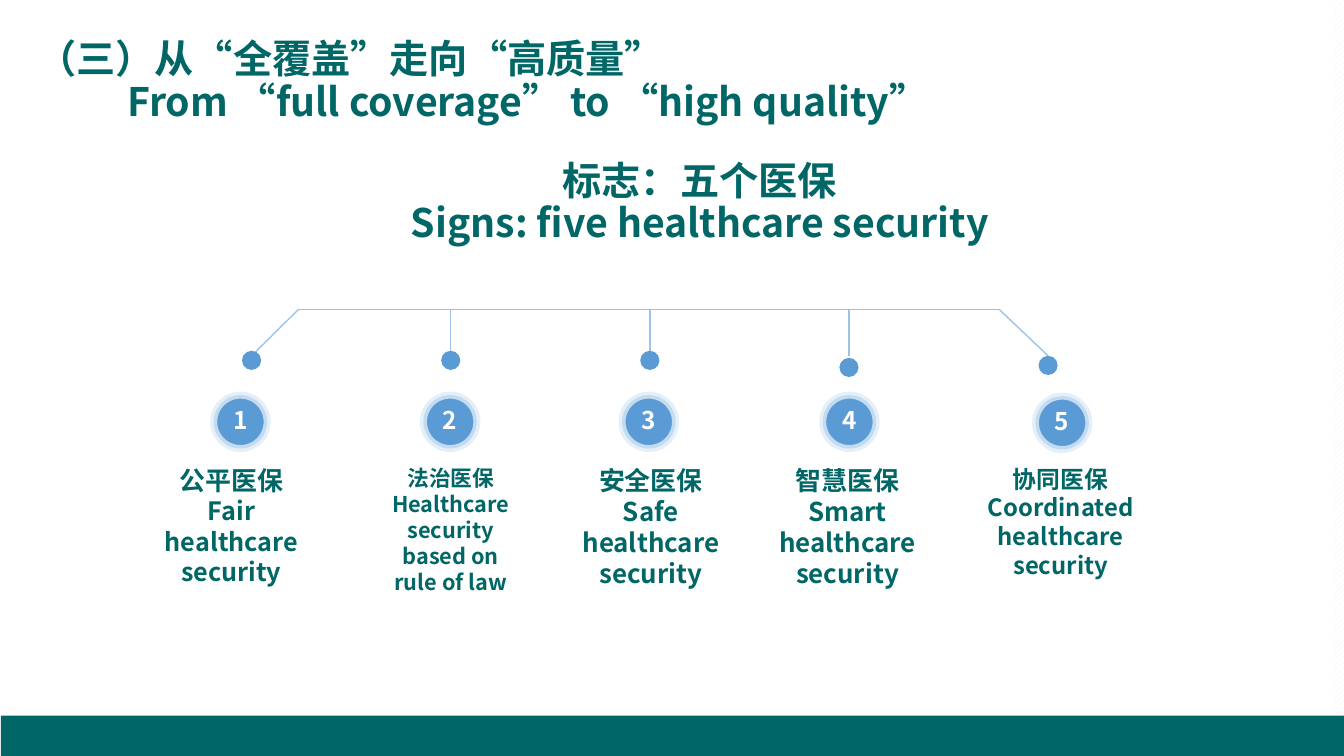
from lxml import etree
from pptx import Presentation
from pptx.dml.color import RGBColor
from pptx.enum.dml import MSO_PATTERN
from pptx.enum.shapes import MSO_CONNECTOR, MSO_SHAPE
from pptx.enum.text import MSO_ANCHOR, MSO_AUTO_SIZE, PP_ALIGN
from pptx.oxml.ns import qn
from pptx.util import Inches, Pt

RECT, OVAL = MSO_SHAPE.RECTANGLE, MSO_SHAPE.OVAL
STRAIGHT = MSO_CONNECTOR.STRAIGHT
LEFT, CENTER = PP_ALIGN.LEFT, PP_ALIGN.CENTER
TOP, MIDDLE = MSO_ANCHOR.TOP, MSO_ANCHOR.MIDDLE
NO_FIT = MSO_AUTO_SIZE.NONE
DIAGONAL = MSO_PATTERN.WIDE_UPWARD_DIAGONAL

W, H = 13.33, 7.5
FONT = "Noto Sans CJK SC"
COLORS = {"white": "FFFFFF", "hatch": "F2F2F2", "teal": "006666",
          "blue": "5B9BD5", "line": "9DC3E6", "ring": "DEEBF7"}

RAIL = (2.96, 9.91, 3.07)
DOT, BADGE = 0.19, 0.53
FIRST_DOT, PITCH = 2.4, 1.975
LABEL_TOP = 4.56
SIGNS = [
    {"zh": "公平医保", "en": "Fair healthcare security", "sizes": (18.5, 18),
     "dot_top": 3.48, "badge": (2.12, 3.92), "label": (1.49, 1.61, 1.27)},
    {"zh": "法治医保", "en": "Healthcare security based on rule of law", "sizes": (15.5, 15.5),
     "dot_top": 3.48, "badge": (4.2, 3.92), "label": (3.76, 1.42, 1.39)},
    {"zh": "安全医保", "en": "Safe healthcare security", "sizes": (18.5, 18.5),
     "dot_top": 3.48, "badge": (6.17, 3.92), "label": (5.65, 1.61, 1.27)},
    {"zh": "智慧医保", "en": "Smart healthcare security", "sizes": (18.5, 18.5),
     "dot_top": 3.55, "badge": (8.16, 3.92), "label": (7.6, 1.61, 1.27)},
    {"zh": "协同医保", "en": "Coordinated healthcare security", "sizes": (17, 17),
     "dot_top": 3.53, "badge": (10.27, 3.93), "label": (9.63, 1.78, 1.27)},
]


def rgb(name):
    """Return the named colour."""
    return RGBColor.from_string(COLORS[name])


def write(tf, lines, sizes, color="teal", align=CENTER, anchor=TOP, spacing=1.0):
    """Fill a text frame with one bold paragraph for each line."""
    for name, value in {"word_wrap": True, "auto_size": NO_FIT,
                        "vertical_anchor": anchor}.items():
        setattr(tf, name, value)
    for i, (line, size) in enumerate(zip(lines, sizes)):
        p = tf.paragraphs[0] if i == 0 else tf.add_paragraph()
        for name, value in {"alignment": align, "line_spacing": spacing,
                            "space_before": Pt(0)}.items():
            setattr(p, name, value)
        r = p.add_run()
        r.text = line
        for name, value in {"size": Pt(size), "bold": True, "name": FONT}.items():
            setattr(r.font, name, value)
        r.font.color.rgb = rgb(color)
        etree.SubElement(r.font._element, qn("a:ea")).set("typeface", FONT)


def add_solid(s, kind, box, color):
    """Add a plain filled shape without outline or shadow."""
    sp = s.shapes.add_shape(kind, *map(Inches, box))
    sp.shadow.inherit = False
    sp.fill.solid()
    sp.fill.fore_color.rgb = rgb(color)
    sp.line.fill.background()
    return sp


def add_line(s, x1, y1, x2, y2):
    """Add a thin light blue line."""
    c = s.shapes.add_connector(STRAIGHT, *map(Inches, (x1, y1, x2, y2)))
    c.line.color.rgb = rgb("line")
    c.line.width = Pt(1)
    etree.SubElement(c._element.spPr, qn("a:effectLst"))


def add_text(s, box, lines, sizes, **formats):
    """Add a text box."""
    sp = s.shapes.add_textbox(*map(Inches, box))
    write(sp.text_frame, lines, sizes, **formats)


def add_backdrop(s):
    """Draw the hatched ground, the white panel and the footer band."""
    fill = s.background.fill
    fill.patterned()
    fill.pattern = DIAGONAL
    fill.fore_color.rgb = rgb("hatch")
    fill.back_color.rgb = rgb("white")
    add_solid(s, RECT, (0, 0, W - 0.1, H), "white")
    add_solid(s, RECT, (0.01, H - 0.4, W, 0.4), "teal")


def add_title(s, box):
    """Place the two-line title with its second line indented."""
    sp = s.shapes.title
    sp.left, sp.top, sp.width, sp.height = map(Inches, box)
    write(sp.text_frame, ["（三）从“全覆盖”走向“高质量”",
                          "From “full coverage” to “high quality”"],
          (28, 28), align=LEFT, anchor=MIDDLE, spacing=0.9)
    pPr = sp.text_frame.paragraphs[1]._p.get_or_add_pPr()
    pPr.set("marL", str(Inches(0.89)))
    pPr.set("indent", "0")


def add_badge(s, left, top, number):
    """Draw a numbered disc with a translucent ring."""
    sp = add_solid(s, OVAL, (left, top, BADGE, BADGE), "blue")
    sp.line.color.rgb = rgb("ring")
    sp.line.width = Pt(5)
    ring = sp.line._ln.find(".//" + qn("a:srgbClr"))
    etree.SubElement(ring, qn("a:alpha")).set("val", "80000")
    tf = sp.text_frame
    tf.margin_bottom = Inches(0.08)
    write(tf, [str(number)], [17.4], color="white", anchor=MIDDLE)


def add_sign(s, index, sign):
    """Draw one branch: line, dot, badge and label."""
    start, end, rail_y = RAIL
    left, top = FIRST_DOT + index * PITCH, sign["dot_top"]
    center = left + DOT / 2
    add_line(s, min(max(center, start), end), rail_y, center, 3.53)
    add_solid(s, OVAL, (left, top, DOT, DOT), "blue")
    add_badge(s, *sign["badge"], index + 1)
    x, width, height = sign["label"]
    add_text(s, (x, LABEL_TOP, width, height), (sign["zh"], sign["en"]), sign["sizes"])


def main():
    """Build and save the slide."""
    prs = Presentation()
    prs.slide_width, prs.slide_height = Inches(W), Inches(H)
    s = prs.slides.add_slide(prs.slide_layouts[5])
    add_backdrop(s)
    start, end, rail_y = RAIL
    add_line(s, start, rail_y, end, rail_y)
    for i, sign in enumerate(SIGNS):
        add_sign(s, i, sign)
    add_text(s, (3.89, 1.64, 6.1, 0.77),
             ["标志：五个医保", "Signs: five healthcare security"],
             (28, 28), anchor=MIDDLE, spacing=0.9)
    add_title(s, (0.27, 0.37, 9.57, 0.89))
    title = s.shapes.title._element
    title.getparent().append(title)
    prs.save("out.pptx")


if __name__ == "__main__":
    main()
